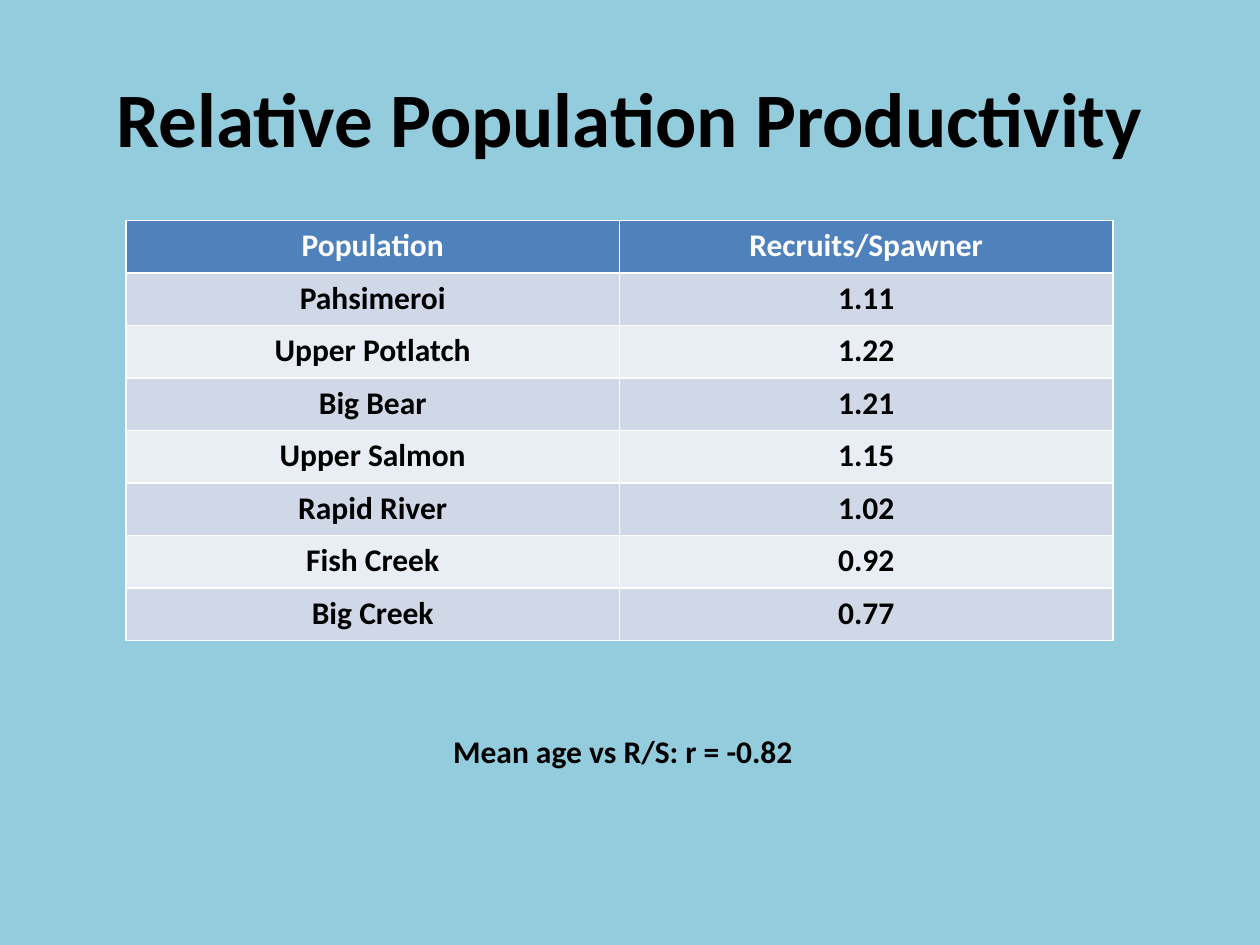
import pptx
import pptx.dml.color
import pptx.enum.text
import pptx.util

Pt = pptx.util.Pt
RGB = pptx.dml.color.RGBColor.from_string
text = pptx.enum.text

theme = {
    "font": "Calibri",
    "back": "93CDDD",
    "ink": "000000",
    "head": "4F81BD",
    "head ink": "FFFFFF",
    "bands": ("D0D8E8", "E9EDF4"),
    "title": 44,
    "body": 18,
}

rows = [
    ("Population", "Recruits/Spawner"),
    ("Pahsimeroi", "1.11"),
    ("Upper Potlatch", "1.22"),
    ("Big Bear", "1.21"),
    ("Upper Salmon", "1.15"),
    ("Rapid River", "1.02"),
    ("Fish Creek", "0.92"),
    ("Big Creek", "0.77"),
]


def write(frame, words, size, ink):
    """Fill a text frame with one bold, centred paragraph."""
    frame.text = words
    para = frame.paragraphs[0]
    para.alignment = text.PP_ALIGN.CENTER
    para.font.name = theme["font"]
    para.font.size = Pt(size)
    para.font.bold = True
    para.font.color.rgb = RGB(ink)


deck = pptx.Presentation()
deck.slide_width, deck.slide_height = Pt(720), Pt(540)
slide = deck.slides.add_slide(deck.slide_layouts[5])
slide.background.fill.solid()
slide.background.fill.fore_color.rgb = RGB(theme["back"])

# Title
title = slide.shapes.title
title.left, title.top = Pt(36), Pt(21.6)
title.width, title.height = Pt(648), Pt(90)
title.text_frame.vertical_anchor = text.MSO_ANCHOR.MIDDLE
write(title.text_frame, "Relative Population Productivity", theme["title"], theme["ink"])

# Productivity table; its default style draws the white borders
high = 30
table = slide.shapes.add_table(
    len(rows), 2, Pt(72), Pt(126), Pt(564), Pt(high * len(rows))
).table
for r, row in enumerate(rows):
    table.rows[r].height = Pt(high)
    fill = theme["bands"][(r - 1) % 2] if r else theme["head"]
    ink = theme["ink"] if r else theme["head ink"]
    for c, words in enumerate(row):
        cell = table.cell(r, c)
        cell.fill.solid()
        cell.fill.fore_color.rgb = RGB(fill)
        write(cell.text_frame, words, theme["body"], ink)

# Correlation
note = slide.shapes.add_textbox(Pt(209), Pt(415), Pt(294), Pt(29)).text_frame
note.word_wrap = True
note.auto_size = text.MSO_AUTO_SIZE.SHAPE_TO_FIT_TEXT
write(note, "Mean age vs R/S: r = -0.82", theme["body"], theme["ink"])

deck.save("out.pptx")
